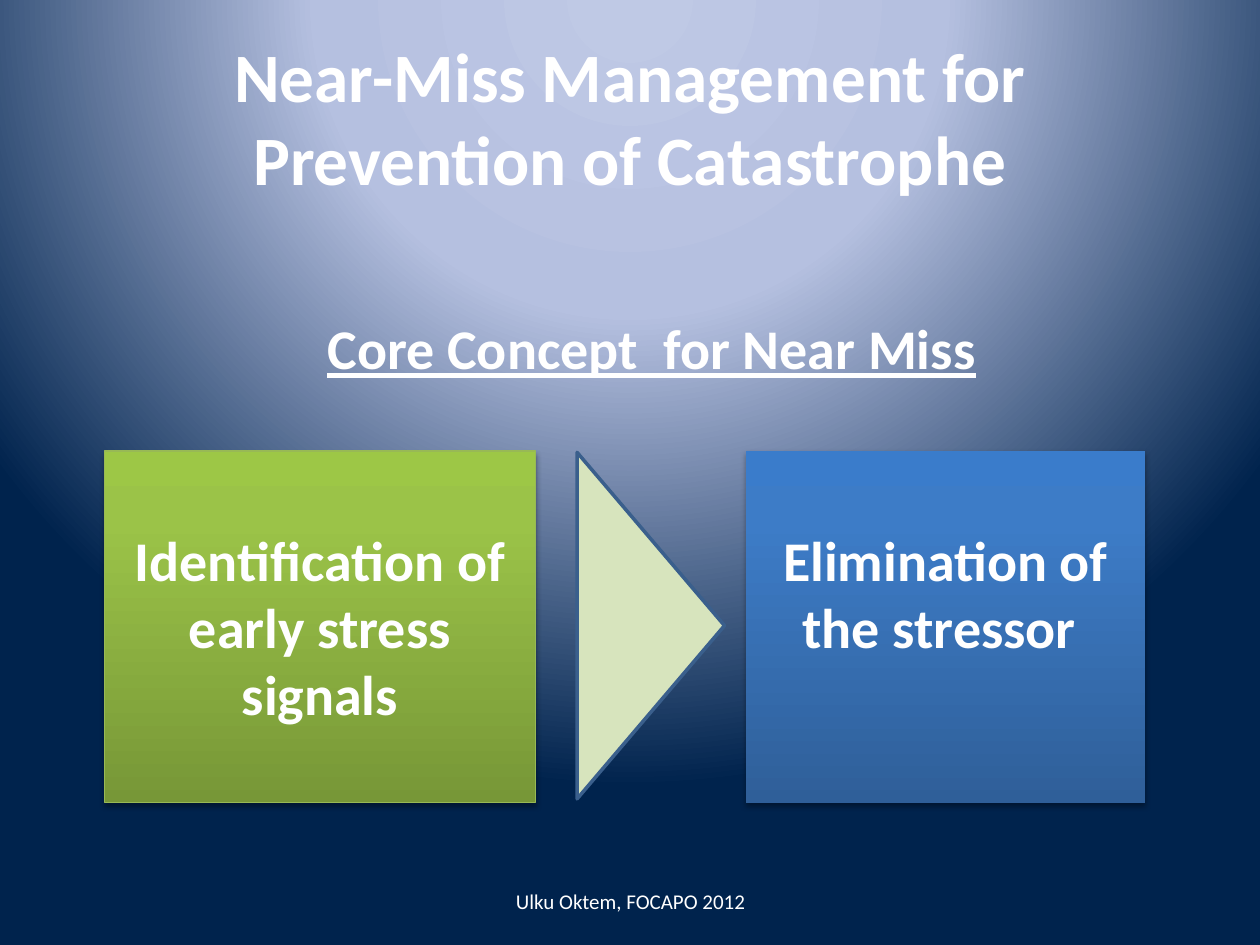
from pptx import Presentation
from pptx.dml.color import RGBColor
from pptx.enum.shapes import MSO_SHAPE
from pptx.enum.text import MSO_ANCHOR, PP_ALIGN
from pptx.oxml import parse_xml
from pptx.oxml.ns import nsdecls, qn
from pptx.util import Inches, Pt

RECT, TRIANGLE = MSO_SHAPE.RECTANGLE, MSO_SHAPE.ISOSCELES_TRIANGLE
TOP, MIDDLE = MSO_ANCHOR.TOP, MSO_ANCHOR.MIDDLE
LEFT, CENTER = PP_ALIGN.LEFT, PP_ALIGN.CENTER

COLORS = {
    "text": "FFFFFF",
    "green_line": "98B955",
    "arrow": "D7E4BD",
    "arrow_line": "3A5F8C",
    "shadow": "000000",
}
SKY = [(0, "BFC9E5"), (40, "B5C0E0"), (100, "00234D")]
GREEN = [(0, "779737"), (80, "9BC348"), (100, "9DC746")]
BLUE = [(0, "2F5F99"), (80, "3D7CC7"), (100, "3A7CCB")]
UPWARD = '<a:lin ang="16200000" scaled="0"/>'
SPOTLIGHT = ('<a:path path="circle"><a:fillToRect l="50000" t="-80000" '
             'r="50000" b="180000"/></a:path>')


def set_gradient(fill, parent, stops, direction):
    """Put a multi-stop gradient where the solid fill would go."""
    fill.solid()
    gs = "".join(f'<a:gs pos="{pos * 1000}"><a:srgbClr val="{color}"/></a:gs>'
                 for pos, color in stops)
    parent.replace(parent.find(qn("a:solidFill")), parse_xml(
        f'<a:gradFill {nsdecls("a")} rotWithShape="1">'
        f'<a:gsLst>{gs}</a:gsLst>{direction}</a:gradFill>'))


def add_text(sp, text, size, bold=True, underline=False, align=CENTER, anchor=MIDDLE):
    tf = sp.text_frame
    tf.word_wrap = True
    tf.vertical_anchor = anchor
    p = tf.paragraphs[0]
    p.alignment = align
    r = p.add_run()
    r.text = text
    r.font.name = "Calibri"
    r.font.size = Pt(size)
    r.font.bold = bold
    r.font.underline = underline
    r.font.color.rgb = RGBColor.from_string(COLORS["text"])


prs = Presentation()
prs.slide_width, prs.slide_height = Inches(10), Inches(7.5)
s = prs.slides.add_slide(prs.slide_layouts[6])

# Background
fill = s.background.fill
fill.solid()
set_gradient(fill, s._element.find(".//" + qn("p:bgPr")), SKY, SPOTLIGHT)

# Title, footer and heading
sp = s.shapes.add_textbox(Inches(0.5), Inches(0.3), Inches(9), Inches(1.25))
add_text(sp, "Near-Miss Management for Prevention of Catastrophe", 39.6)
sp = s.shapes.add_textbox(Inches(3.42), Inches(6.95), Inches(3.17), Inches(0.4))
add_text(sp, "Ulku Oktem, FOCAPO 2012", 12, bold=False)
sp = s.shapes.add_textbox(Inches(2.5), Inches(2.44), Inches(5.42), Inches(0.64))
add_text(sp, "Core Concept  for Near Miss", 32, underline=True, align=LEFT, anchor=TOP)

# The two concept boxes
boxes = [
    (0.83, 3.42, GREEN, "green_line", "Identification of early stress signals"),
    (5.92, 3.17, BLUE, None, "Elimination of the stressor "),
]
for left, width, stops, line, text in boxes:
    sp = s.shapes.add_shape(RECT, Inches(left), Inches(3.58), Inches(width), Inches(2.79))
    set_gradient(sp.fill, sp._element.spPr, stops, UPWARD)
    if line:
        sp.line.color.rgb = RGBColor.from_string(COLORS[line])
        sp.line.width = Pt(0.75)
    else:
        sp.line.fill.background()
    sp.shadow.inherit = False
    sp._element.spPr.find(qn("a:effectLst")).append(parse_xml(
        f'<a:outerShdw {nsdecls("a")} blurRad="{Pt(3.1)}" dist="{Pt(1.8)}" '
        f'dir="5400000" rotWithShape="0"><a:srgbClr val="{COLORS["shadow"]}">'
        '<a:alpha val="35000"/></a:srgbClr></a:outerShdw>'))
    sp.text_frame.margin_top = Inches(0.59)
    add_text(sp, text, 32, anchor=TOP)

# Triangle pointing from signals to elimination
sp = s.shapes.add_shape(TRIANGLE, Inches(3.79), Inches(4.38), Inches(2.75), Inches(1.17))
sp.rotation = 90
sp.shadow.inherit = False
sp.fill.solid()
sp.fill.fore_color.rgb = RGBColor.from_string(COLORS["arrow"])
sp.line.color.rgb = RGBColor.from_string(COLORS["arrow_line"])
sp.line.width = Pt(2)

prs.save("out.pptx")
